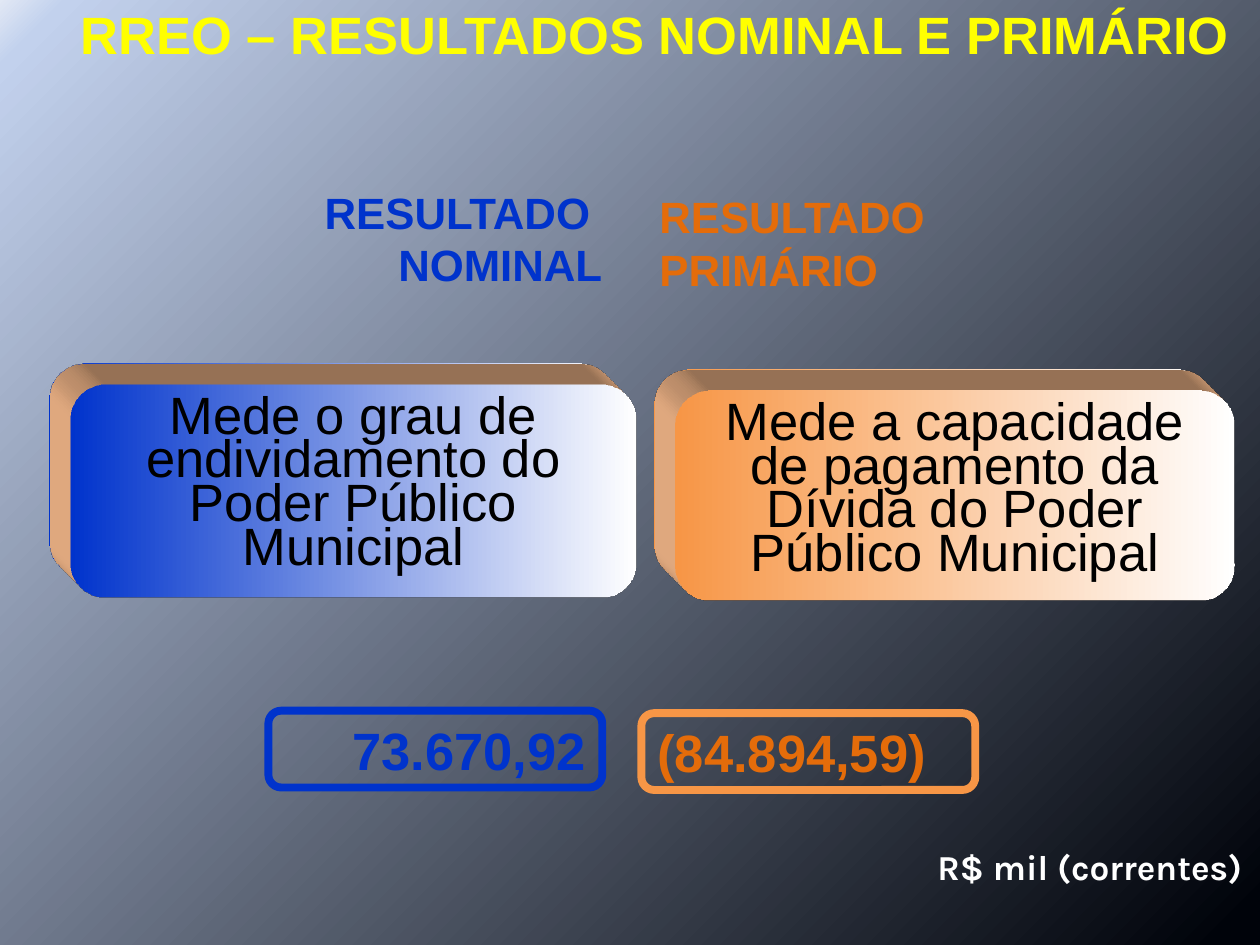
import copy

import pptx
import pptx.dml.color
import pptx.enum.shapes
import pptx.enum.text
import pptx.oxml
import pptx.oxml.ns
import pptx.util

Inches = pptx.util.Inches
Pt = pptx.util.Pt
RGBColor = pptx.dml.color.RGBColor
Align = pptx.enum.text.PP_ALIGN
Anchor = pptx.enum.text.MSO_ANCHOR

BLUE = RGBColor(0x00, 0x33, 0xCC)
ORANGE = RGBColor(0xF7, 0x96, 0x46)
RUST = RGBColor(0xE4, 0x6C, 0x0A)
YELLOW = RGBColor(0xFF, 0xFF, 0x00)
WHITE = RGBColor(0xFF, 0xFF, 0xFF)
BLACK = RGBColor(0x00, 0x00, 0x00)
NIGHT = RGBColor(0x00, 0x03, 0x0A)
SKY = RGBColor(0xC2, 0xD1, 0xED)
MIST = RGBColor(0xE1, 0xE8, 0xF5)
TAN = "FFC090"

DEPTH = (
    '<a:scene3d %s><a:camera prst="legacyObliqueTopLeft"/>'
    '<a:lightRig rig="legacyFlat3" dir="b"/></a:scene3d>',
    '<a:sp3d %s extrusionH="430200" prstMaterial="legacyMatte">'
    '<a:extrusionClr><a:srgbClr val="' + TAN + '"/></a:extrusionClr></a:sp3d>',
)


def blend(fill, owner, stops, angle):
    """Fill with a linear gradient; stops are (position, colour) pairs."""
    fill.gradient()
    fill.gradient_angle = angle
    bank = next(owner.iter(pptx.oxml.ns.qn("a:gsLst")))
    while len(bank) < len(stops):
        bank.append(copy.deepcopy(bank[-1]))
    for stop, (place, color) in zip(fill.gradient_stops, stops):
        stop.position = place
        stop.color.rgb = color


def write(shape, lines, size, color, align, bold=True, font="Arial",
          wrap=False, anchor=Anchor.MIDDLE, space=None):
    frame = shape.text_frame
    frame.word_wrap = wrap
    frame.vertical_anchor = anchor
    for i, line in enumerate(lines):
        para = frame.add_paragraph() if i else frame.paragraphs[0]
        para.alignment = align
        if space:
            para.line_spacing = space
        run = para.add_run()
        run.text = line
        run.font.name = font
        run.font.size = Pt(size)
        run.font.bold = bold
        run.font.color.rgb = color


def add_box(slide, area, edge=None):
    kind = pptx.enum.shapes.MSO_SHAPE.ROUNDED_RECTANGLE
    box = slide.shapes.add_shape(kind, *map(Inches, area))
    box.shadow.inherit = False
    box.fill.background()
    if edge:
        box.line.color.rgb = edge
        box.line.width = Pt(4.5)
    else:
        box.line.fill.background()
    return box


def add_card(slide, area, color, text):
    """Extruded card with a fading face."""
    card = add_box(slide, area)
    blend(card.fill, card.element, [(0, color), (1, WHITE)], 0)
    for part in DEPTH:
        card.element.spPr.append(
            pptx.oxml.parse_xml(part % pptx.oxml.ns.nsdecls("a")))
    write(card, [text], 30, BLACK, Align.CENTER, bold=False, wrap=True,
          anchor=Anchor.TOP, space=Pt(25))


def add_note(slide, area, text, size, color, **style):
    note = slide.shapes.add_textbox(*map(Inches, area))
    write(note, [text], size, color, Align.RIGHT, anchor=Anchor.TOP, **style)


def main():
    deck = pptx.Presentation()
    deck.slide_width, deck.slide_height = Inches(10), Inches(7.5)
    slide = deck.slides.add_slide(deck.slide_layouts[6])
    blend(slide.background.fill, slide.element,
          [(0.02, NIGHT), (0.97, SKY), (1, MIST)], 135)

    columns = [
        (BLUE, BLUE, Align.RIGHT,
         (2.17, 1.36, 2.76, 1.06), ["RESULTADO ", "NOMINAL"],
         (2.13, 5.64, 2.65, 0.61), "73.670,92",
         (0.56, 3.05, 4.49, 1.69),
         "Mede o grau de endividamento do Poder Público Municipal"),
        (RUST, ORANGE, Align.LEFT,
         (5.08, 1.36, 2.94, 1.13), ["RESULTADO", "PRIMÁRIO"],
         (5.09, 5.66, 2.65, 0.61), "(84.894,59)",
         (5.36, 3.1, 4.44, 1.67),
         "Mede a capacidade de pagamento da Dívida do Poder Público Municipal"),
    ]
    for ink, tone, align, top, head, low, value, mid, text in columns:
        write(add_box(slide, top), head, 25, ink, align)
        write(add_box(slide, low, tone), [value], 30, ink, align)
        add_card(slide, mid, tone, text)

    add_note(slide, (7.19, 6.66, 2.77, 0.44), "R$ mil (correntes)", 20, WHITE,
             font="Karla")
    add_note(slide, (0, -0.03, 9.86, 0.61),
             "RREO – RESULTADOS NOMINAL E PRIMÁRIO", 30, YELLOW, wrap=True)
    deck.save("out.pptx")


if __name__ == "__main__":
    main()
